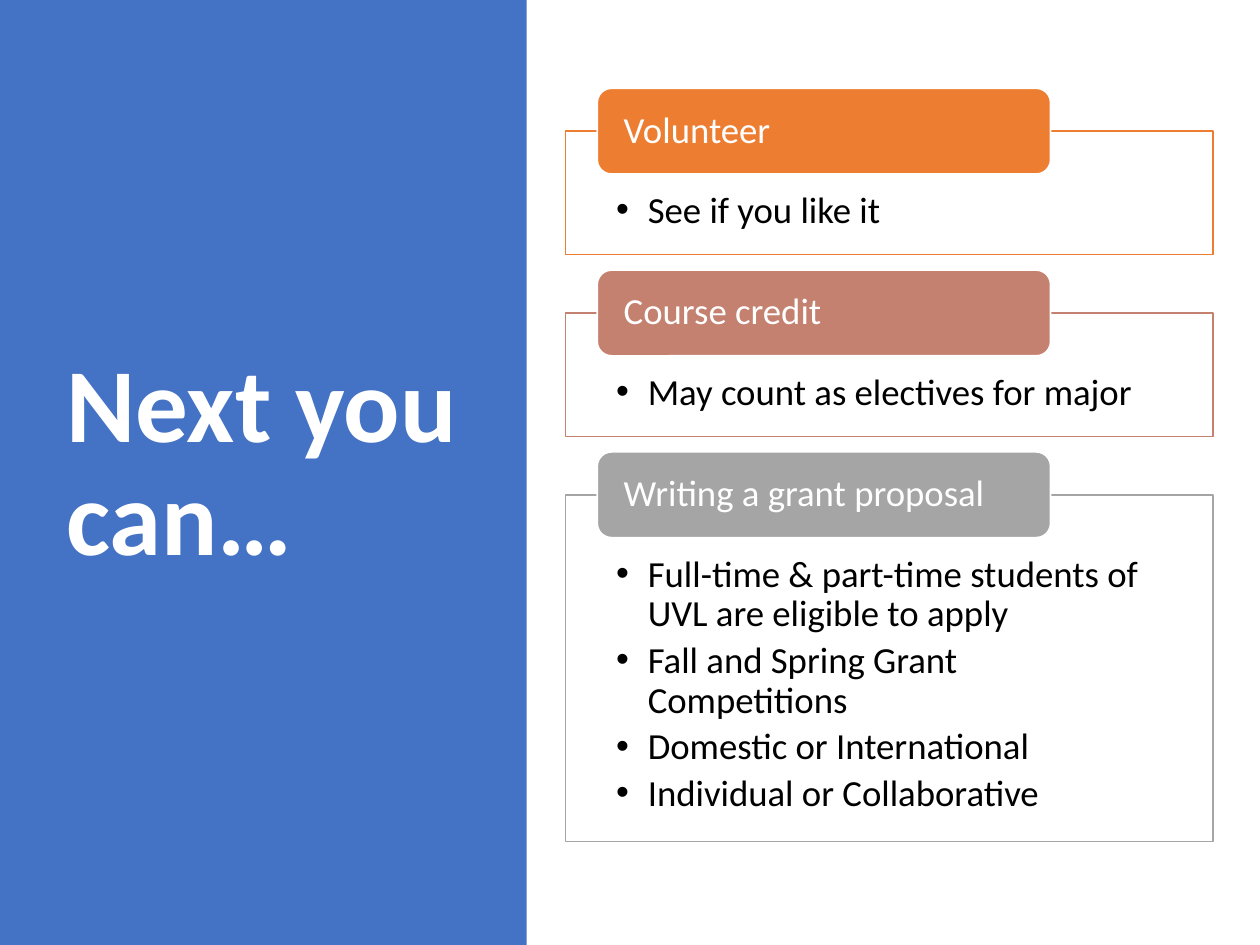
from dataclasses import dataclass

from lxml.etree import SubElement
from pptx import Presentation
from pptx.dml.color import RGBColor
from pptx.enum.shapes import MSO_SHAPE as Kind
from pptx.enum.text import MSO_ANCHOR as Anchor, MSO_AUTO_SIZE as Auto, PP_ALIGN as Align
from pptx.oxml.ns import qn
from pptx.util import Cm, Pt

BLUE = RGBColor(0x44, 0x72, 0xC4)
ORANGE = RGBColor(0xED, 0x7D, 0x31)
ROSE = RGBColor(0xC4, 0x81, 0x70)
GRAY = RGBColor(0xA5, 0xA5, 0xA5)
WHITE = RGBColor(0xFF, 0xFF, 0xFF)
BLACK = RGBColor(0, 0, 0)

TOP = 1.78
GAP = 0.31
TAB = 1.73
DROP = TAB / 2


@dataclass
class Card:
    head: str
    items: list[str]
    color: RGBColor
    tall: float


CARDS = [
    Card("Volunteer", ["See if you like it"], ORANGE, 2.49),
    Card("Course credit", ["May count as electives for major"], ROSE, 2.49),
    Card("Writing a grant proposal", [
        "Full-time & part-time students of UVL are eligible to apply",
        "Fall and Spring Grant Competitions",
        "Domestic or International",
        "Individual or Collaborative",
    ], GRAY, 6.99),
]


def write(shape, lines: list[str], *, size=21, color=WHITE, bold=False,
          anchor=Anchor.MIDDLE, pads=(0.25, 0.13, 0.25, 0.13),
          after=0, bullet=False) -> None:
    frame = shape.text_frame
    frame.word_wrap = True
    frame.auto_size = Auto.NONE
    frame.vertical_anchor = anchor
    (frame.margin_left, frame.margin_top,
     frame.margin_right, frame.margin_bottom) = map(Cm, pads)
    for i, line in enumerate(lines):
        para = frame.add_paragraph() if i else frame.paragraphs[0]
        para.alignment = Align.LEFT
        para.line_spacing = 0.9
        para.space_after = Pt(after)
        run = para.add_run()
        run.text = line
        font = run.font
        font.name = "Calibri"
        font.size = Pt(size)
        font.bold = bold
        font.color.rgb = color
        if bullet:
            para.level = 1
            props = para._p.get_or_add_pPr()
            props.set("marL", str(Cm(0.64)))
            props.set("indent", str(-Cm(0.64)))
            SubElement(props, qn("a:buFont"), typeface="Arial")
            SubElement(props, qn("a:buChar"), char="•")


def box(slide, kind: Kind, spot: tuple, fill: RGBColor, line: RGBColor | None = None):
    shape = slide.shapes.add_shape(kind, *map(Cm, spot))
    shape.shadow.inherit = False
    shape.fill.solid()
    shape.fill.fore_color.rgb = fill
    if line is None:
        shape.line.fill.background()
    else:
        shape.line.color.rgb = line
        shape.line.width = Pt(1)
    return shape


def fade(shape, share: int) -> None:
    tint = shape.element.spPr.find(qn("a:solidFill"))[0]
    SubElement(tint, qn("a:alpha"), val=str(share * 1000))


def draw(slide, card: Card, top: float) -> float:
    frame = box(slide, Kind.RECTANGLE, (11.4, top + DROP, 13.06, card.tall),
                WHITE, card.color)
    fade(frame, 90)
    write(frame, card.items, color=BLACK, anchor=Anchor.TOP,
          pads=(1.02, 1.22, 1.02, 0.41), after=4, bullet=True)
    tab = box(slide, Kind.ROUNDED_RECTANGLE, (12.04, top, 9.14, TAB),
              card.color, WHITE)
    write(tab, [card.head], pads=(0.45, 0.09, 0.45, 0.09))
    return top + DROP + card.tall + GAP


def main() -> None:
    deck = Presentation()
    deck.slide_width, deck.slide_height = Cm(25.4), Cm(19.05)
    slide = deck.slides.add_slide(deck.slide_layouts[5])
    title = slide.shapes.title
    panel = box(slide, Kind.RECTANGLE, (0, 0, 10.62, 19.05), BLUE)
    title.element.addprevious(panel.element)
    title.left, title.top, title.width, title.height = map(Cm, (1.09, 1.73, 8.64, 15.29))
    write(title, ["Next you can…"], size=60, bold=True)
    top = TOP
    for card in CARDS:
        top = draw(slide, card, top)
    deck.save("out.pptx")


if __name__ == "__main__":
    main()
